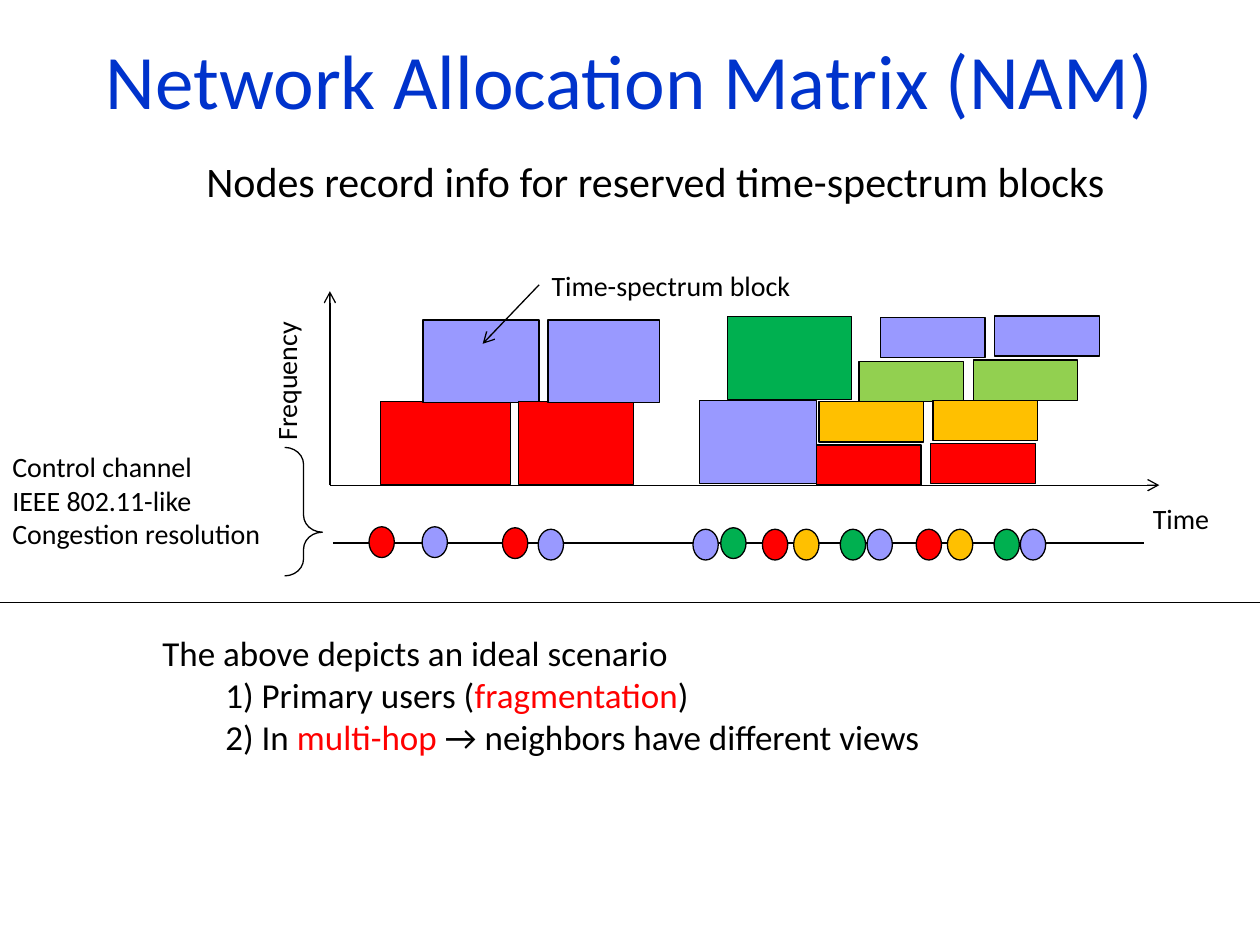
from dataclasses import dataclass

from lxml import etree
from pptx import Presentation, util as u
from pptx.dml.color import RGBColor
from pptx.enum import shapes, text
from pptx.oxml import ns

Cm = u.Cm


@dataclass(frozen=True)
class Theme:
    font: str = "Calibri"
    black: str = "000000"
    title: str = "0033CC"
    red: str = "FF0000"
    violet: str = "9999FF"
    green: str = "00B050"
    lime: str = "92D050"
    orange: str = "FFC000"
    title_size: int = 44
    subtitle_size: int = 24
    body_size: int = 20
    label_size: int = 16
    line_width: float = 0.75


THEME = Theme()

WIDTH, HEIGHT = 25.4, 19.05
ORIGIN_X, ORIGIN_Y = 6.65, 9.78
BLOCK_HEIGHT = 1.67
SMALL_WIDTH, SMALL_HEIGHT = 2.11, 0.81
SMALL_STEP_X, SMALL_STEP_Y = 2.3, -0.03
DOT_WIDTH, DOT_HEIGHT = 0.51, 0.62

# Large blocks: left, top, width, colour
LARGE_BLOCKS = [
    (7.67, 8.1, 2.62, THEME.red),
    (8.53, 6.45, 2.34, THEME.violet),
    (10.46, 8.1, 2.31, THEME.red),
    (11.05, 6.45, 2.24, THEME.violet),
    (14.1, 8.08, 2.36, THEME.violet),
    (14.66, 6.38, 2.51, THEME.green),
]
# Small blocks, each drawn twice: left, top, colour
SMALL_BLOCKS = [
    (16.46, 8.97, THEME.red),
    (16.51, 8.1, THEME.orange),
    (17.32, 7.29, THEME.lime),
    (17.75, 6.4, THEME.violet),
]
# Control messages: left, top, colour
MESSAGES = [
    (7.44, 10.62, THEME.red), (8.51, 10.62, THEME.violet),
    (10.13, 10.64, THEME.red), (10.85, 10.67, THEME.violet),
    (13.97, 10.67, THEME.violet), (14.53, 10.64, THEME.green),
    (15.37, 10.67, THEME.red), (16.0, 10.67, THEME.orange),
    (16.94, 10.67, THEME.green), (17.48, 10.67, THEME.violet),
    (18.47, 10.67, THEME.red), (19.1, 10.67, THEME.orange),
    (20.04, 10.67, THEME.green), (20.57, 10.67, THEME.violet),
]


def place(item, left, top, width, height):
    item.left, item.top = Cm(left), Cm(top)
    item.width, item.height = Cm(width), Cm(height)


def add_text(para, words, size=THEME.label_size, color=THEME.black):
    span = para.add_run()
    span.text = words
    span.font.name = THEME.font
    span.font.size = u.Pt(size)
    span.font.color.rgb = RGBColor.from_string(color)


def style_line(line):
    line.color.rgb = RGBColor.from_string(THEME.black)
    line.width = u.Pt(THEME.line_width)


def add_label(page, lines, area, size=THEME.label_size, wrap=False, rotation=0):
    box = page.shapes.add_textbox(*map(Cm, area))
    box.rotation = rotation
    frame = box.text_frame
    frame.word_wrap = wrap
    frame.auto_size = text.MSO_AUTO_SIZE.SHAPE_TO_FIT_TEXT
    for index, words in enumerate(lines):
        para = frame.add_paragraph() if index else frame.paragraphs[0]
        add_text(para, words, size)


def add_outlined(page, kind, area, color=None):
    item = page.shapes.add_shape(kind, *map(Cm, area))
    item.shadow.inherit = False
    if color:
        item.fill.solid()
        item.fill.fore_color.rgb = RGBColor.from_string(color)
    else:
        item.fill.background()
    style_line(item.line)
    return item


def add_line(page, start, end, arrow=False):
    line = page.shapes.add_connector(
        shapes.MSO_CONNECTOR.STRAIGHT, *map(Cm, (*start, *end)))
    style_line(line.line)
    if arrow:
        etree.SubElement(line.line._get_or_add_ln(), ns.qn("a:tailEnd"), type="arrow")
    etree.SubElement(line._element.spPr, ns.qn("a:effectLst"))


def fill_title(page):
    title = page.shapes.title
    place(title, 1.27, 0, 22.86, 3.18)
    title.text_frame.vertical_anchor = text.MSO_ANCHOR.MIDDLE
    para = title.text_frame.paragraphs[0]
    para.alignment = text.PP_ALIGN.CENTER
    add_text(para, "Network Allocation Matrix (NAM)", THEME.title_size, THEME.title)


def fill_body(page):
    body = page.placeholders[1]
    place(body, 3.02, 12.6, 22.38, 2.82)
    frame = body.text_frame
    frame.auto_size = text.MSO_AUTO_SIZE.SHAPE_TO_FIT_TEXT
    rows = [
        (0, [("The above depicts an ideal scenario", THEME.black)]),
        (1, [("1) Primary users (", THEME.black), ("fragmentation", THEME.red),
             (")", THEME.black)]),
        (1, [("2) In ", THEME.black), ("multi-hop ", THEME.red),
             ("→ neighbors have different views", THEME.black)]),
    ]
    for index, (level, spans) in enumerate(rows):
        para = frame.add_paragraph() if index else frame.paragraphs[0]
        para.level = level
        para.space_before = u.Pt(0)
        props = para._p.get_or_add_pPr()
        props.set("marL", str(Cm(1.27 * level)))
        props.set("indent", "0")
        etree.SubElement(props, ns.qn("a:buNone"))
        for words, color in spans:
            add_text(para, words, THEME.body_size, color)


def draw_chart(page):
    # Axes and control channel
    origin = (ORIGIN_X, ORIGIN_Y)
    add_line(page, origin, (23.37, ORIGIN_Y), arrow=True)
    add_line(page, origin, (ORIGIN_X, 5.87), arrow=True)
    add_line(page, (6.71, 10.95), (23.06, 10.95))

    # Reserved blocks
    rectangle = shapes.MSO_SHAPE.RECTANGLE
    for left, top, width, color in LARGE_BLOCKS:
        add_outlined(page, rectangle, (left, top, width, BLOCK_HEIGHT), color)
    for step in range(2):
        for left, top, color in SMALL_BLOCKS:
            area = (left + step * SMALL_STEP_X, top + step * SMALL_STEP_Y,
                    SMALL_WIDTH, SMALL_HEIGHT)
            add_outlined(page, rectangle, area, color)

    # Control messages
    for left, top, color in MESSAGES:
        add_outlined(page, shapes.MSO_SHAPE.OVAL,
                     (left, top, DOT_WIDTH, DOT_HEIGHT), color)

    brace = add_outlined(page, shapes.MSO_SHAPE.RIGHT_BRACE, (5.74, 9.02, 0.76, 2.59))
    brace.adjustments[0], brace.adjustments[1] = 0.45, 0.66


def draw_labels(page):
    add_label(page, ["Nodes record info for reserved time-spectrum blocks"],
              (3.91, 3.02, 22.38, 1.27), size=THEME.subtitle_size, wrap=True)
    add_label(page, ["Control channel", "IEEE 802.11-like", "Congestion resolution"],
              (0, 8.94, 6.02, 2.59))
    add_label(page, ["Frequency"], (4.32, 7.21, 2.9, 0.94), rotation=270)
    add_label(page, ["Time"], (22.99, 9.98, 1.7, 0.94))
    add_label(page, ["Time-spectrum block"], (10.87, 5.28, 5.79, 0.94))
    add_line(page, (10.87, 5.74), (9.73, 6.93), arrow=True)


def main():
    deck = Presentation()
    deck.slide_width, deck.slide_height = Cm(WIDTH), Cm(HEIGHT)
    page = deck.slides.add_slide(deck.slide_layouts[1])
    fill_title(page)
    draw_chart(page)
    draw_labels(page)
    # Divider between the chart and the remarks
    add_line(page, (0, 12.14), (WIDTH, 12.14))
    fill_body(page)
    deck.save("out.pptx")


if __name__ == "__main__":
    main()
